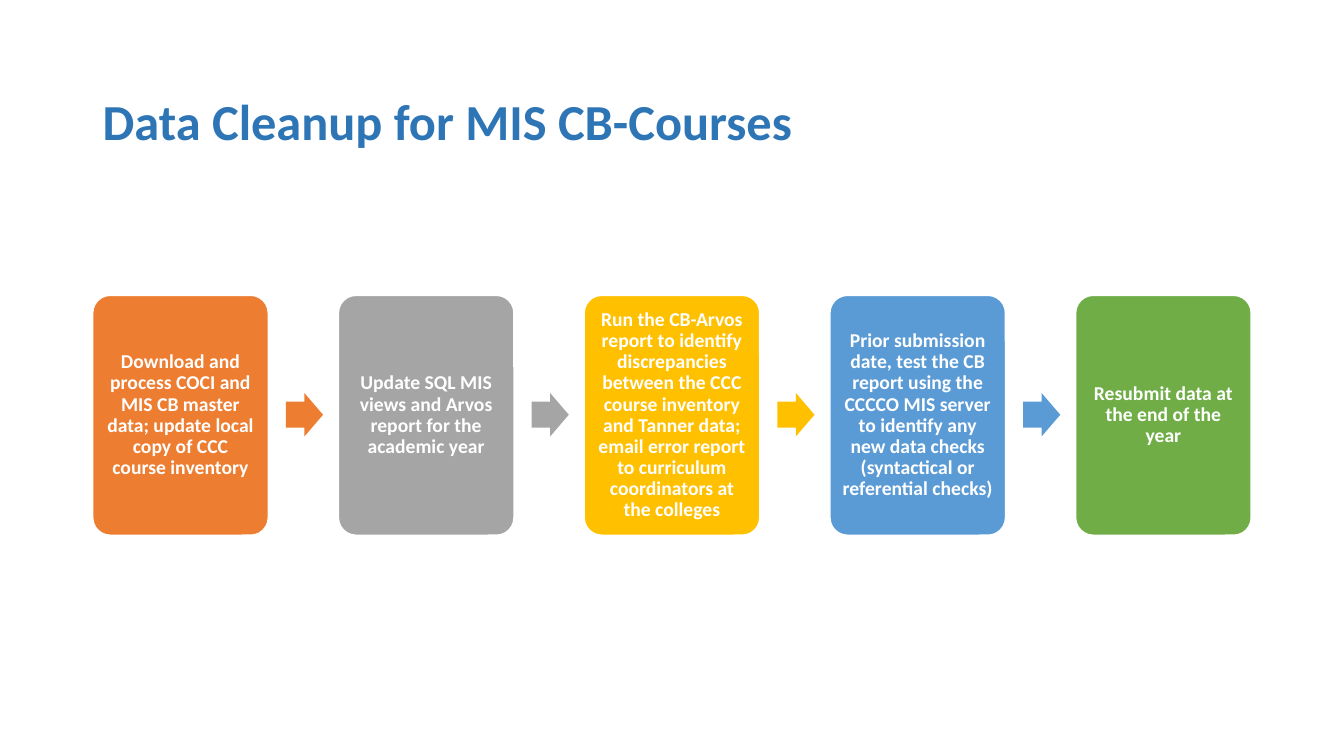
import dataclasses

import pptx
import pptx.dml.color
import pptx.enum.shapes
import pptx.enum.text
import pptx.util

SHAPES = pptx.enum.shapes.MSO_SHAPE
ALIGN = pptx.enum.text.PP_ALIGN
MIDDLE = pptx.enum.text.MSO_ANCHOR.MIDDLE


@dataclasses.dataclass(frozen=True)
class Theme:
    font: str = "Calibri"
    title_size: int = 36
    step_size: int = 14
    title: str = "2E75B6"
    white: str = "FFFFFF"
    steps: tuple = ("ED7D31", "A5A5A5", "FFC000", "5B9BD5", "70AD47")


def color(value):
    return pptx.dml.color.RGBColor.from_string(value)


def apply(target, values):
    for name, value in values.items():
        setattr(target, name, value)


class ProcessSlide:
    left = 0.92
    column = 11.49 / 33
    row = 0.1

    def __init__(self, deck, theme):
        self.theme = theme
        self.page = deck.slides.add_slide(deck.slide_layouts[6])

    def place(self, column, row, columns, rows):
        inches = (self.left + column * self.column, row * self.row,
                  columns * self.column, rows * self.row)
        return [pptx.util.Inches(value) for value in inches]

    def set_text(self, box, text, size, ink, align, margins):
        frame = box.text_frame
        apply(frame, {"word_wrap": True, "vertical_anchor": MIDDLE, **margins})
        para = frame.paragraphs[0]
        apply(para, {"alignment": align, "line_spacing": 0.9})
        span = para.add_run()
        span.text = text
        apply(span.font, {"name": self.theme.font, "size": pptx.util.Pt(size), "bold": True})
        span.font.color.rgb = color(ink)

    def title(self, text, *cell):
        box = self.page.shapes.add_textbox(*self.place(*cell))
        self.set_text(box, text, self.theme.title_size, self.theme.title, ALIGN.LEFT, {})

    def shape(self, kind, fill, adjustments, *cell):
        box = self.page.shapes.add_shape(kind, *self.place(*cell))
        box.shadow.inherit = False
        box.fill.solid()
        box.fill.fore_color.rgb = color(fill)
        for index, value in enumerate(adjustments):
            box.adjustments[index] = value
        return box

    def card(self, text, fill, *cell):
        box = self.shape(SHAPES.ROUNDED_RECTANGLE, fill, [0.1], *cell)
        box.line.color.rgb = color(self.theme.white)
        box.line.width = pptx.util.Pt(1)
        sides = ("left", "top", "right", "bottom")
        margins = {f"margin_{side}": pptx.util.Inches(0.06) for side in sides}
        self.set_text(box, text, self.theme.step_size, self.theme.white, ALIGN.CENTER, margins)

    def arrow(self, fill, *cell):
        box = self.shape(SHAPES.RIGHT_ARROW, fill, [0.6, 0.5], *cell)
        box.line.fill.background()


STEPS = (
    "Download and process COCI and MIS CB master data; update local copy of CCC course inventory",
    "Update SQL MIS views and Arvos report for the academic year",
    "Run the CB-Arvos report to identify discrepancies between the CCC course inventory "
    "and Tanner data; email error report to curriculum coordinators at the colleges",
    "Prior submission date, test the CB report using the CCCCO MIS server to identify "
    "any new data checks (syntactical or referential checks)",
    "Resubmit data at the end of the year",
)


def main():
    deck = pptx.Presentation()
    apply(deck, {"slide_width": pptx.util.Inches(13.33), "slide_height": pptx.util.Inches(7.5)})
    theme = Theme()
    slide = ProcessSlide(deck, theme)
    slide.title("Data Cleanup for MIS CB-Courses", 0, 5.1, 33, 14.5)
    for index, (text, fill) in enumerate(zip(STEPS, theme.steps)):
        start = index * 7
        slide.card(text, fill, start, 29.3, 5, 23.8)
        if index < len(STEPS) - 1:
            slide.arrow(fill, start + 5.5, 39, 1.06, 4.3)
    deck.save("out.pptx")


if __name__ == "__main__":
    main()
